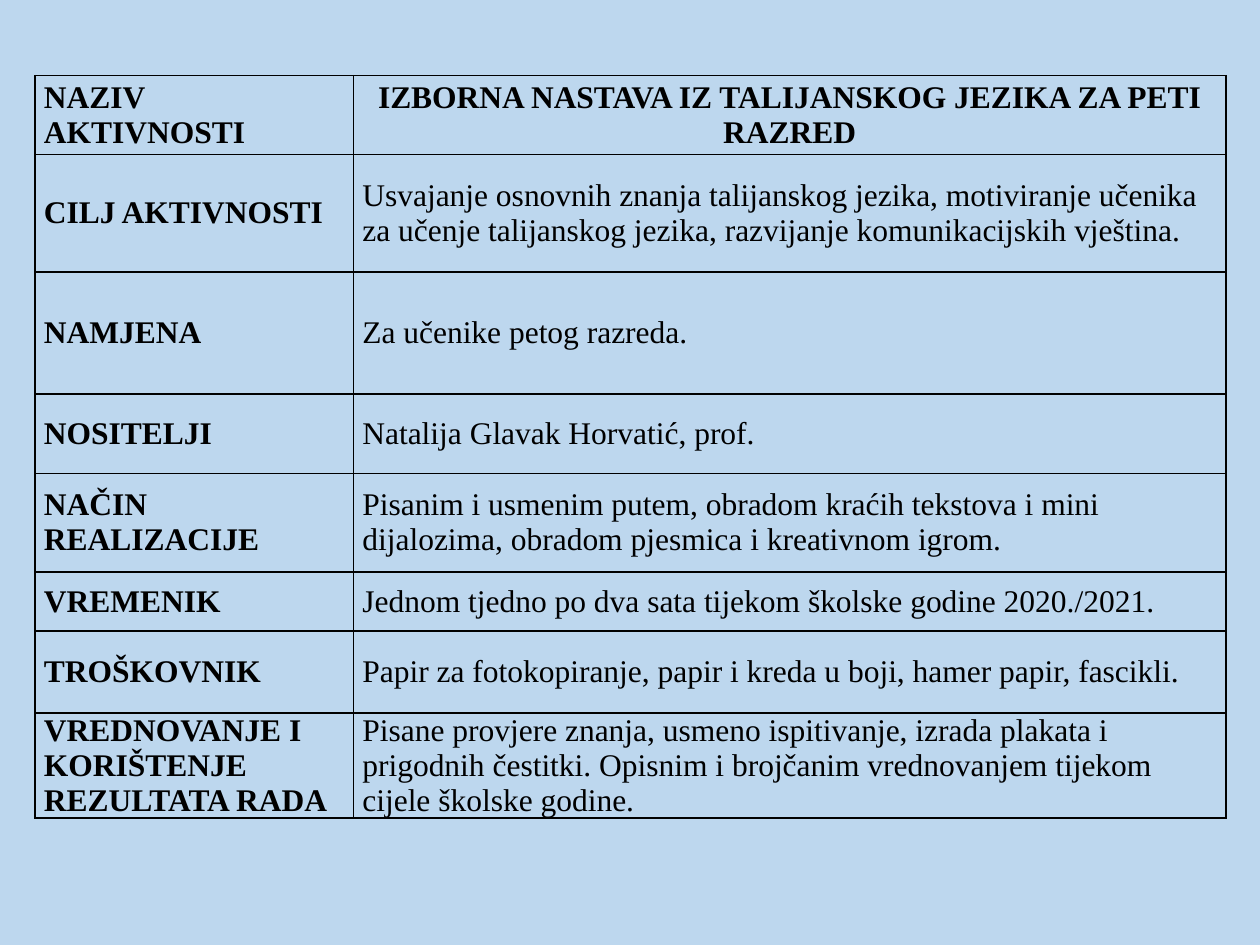
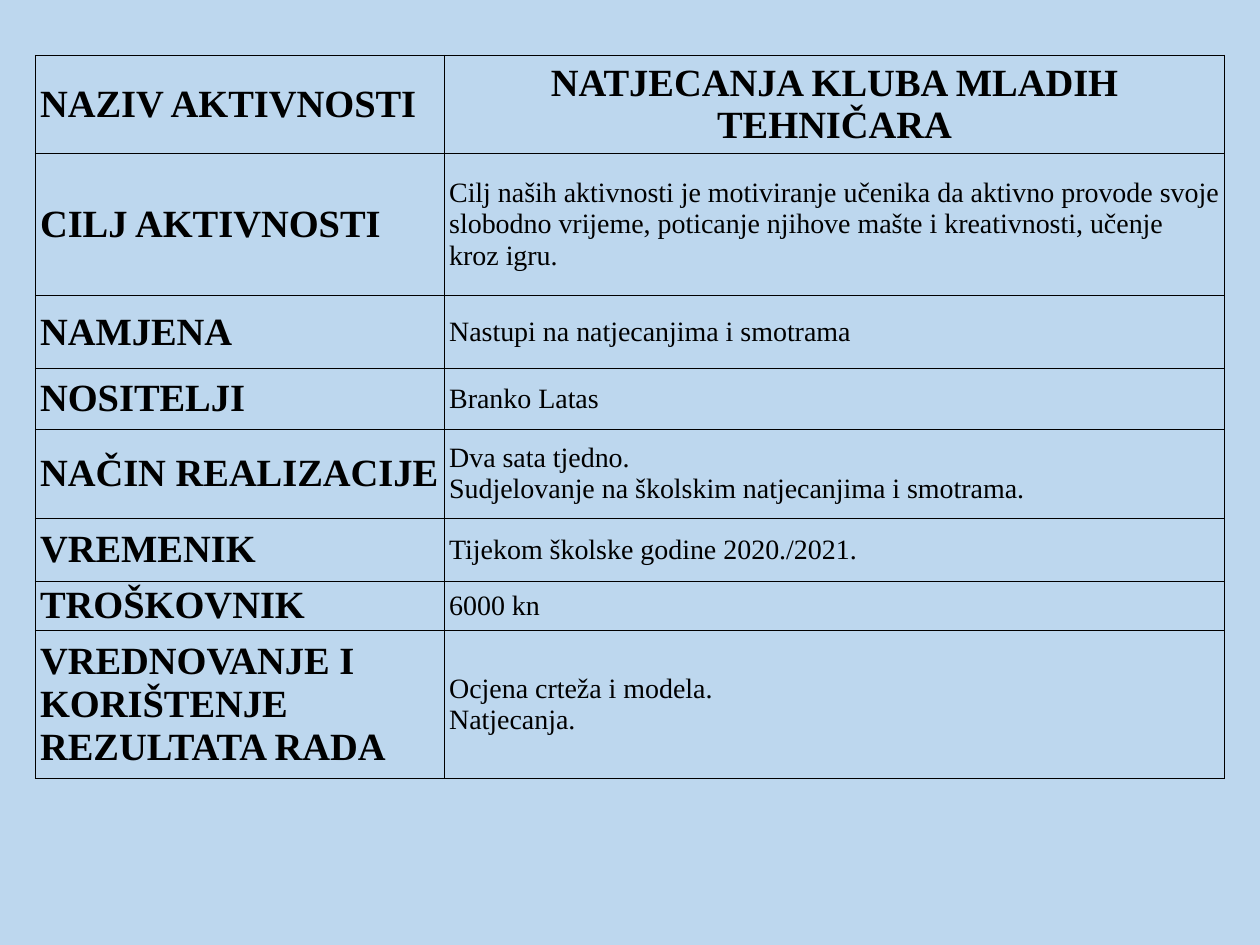
from lxml.etree import SubElement
from pptx import Presentation
from pptx.dml.color import RGBColor
from pptx.enum.text import MSO_ANCHOR, PP_ALIGN
from pptx.oxml.ns import qn
from pptx.util import Pt

BACKGROUND = "BDD7EE"
INK = "000000"
FONT = "Times New Roman"
LABELS = [
    "NAZIV AKTIVNOSTI",
    "CILJ AKTIVNOSTI",
    "NAMJENA",
    "NOSITELJI",
    "NAČIN REALIZACIJE",
    "VREMENIK",
    "TROŠKOVNIK",
    "VREDNOVANJE I KORIŠTENJE REZULTATA RADA",
]

ACTIVITIES = [
    {
        "left": 20, "top": 43.2,
        "columns": [182, 498.5],
        "rows": [45.2, 67, 69.8, 45.4, 56.2, 33.8, 47, 59.8],
        "label_size": 18, "detail_size": 18, "inset": 5.1, "border": 1,
        "details": [
            ["IZBORNA NASTAVA IZ TALIJANSKOG JEZIKA ZA PETI RAZRED"],
            ["Usvajanje osnovnih znanja talijanskog jezika, motiviranje učenika "
             "za učenje talijanskog jezika, razvijanje komunikacijskih vještina."],
            ["Za učenike petog razreda."],
            ["Natalija Glavak Horvatić, prof."],
            ["Pisanim i usmenim putem, obradom kraćih tekstova i mini dijalozima, "
             "obradom pjesmica i kreativnom igrom."],
            ["Jednom tjedno po dva sata tijekom školske godine 2020./2021."],
            ["Papir za fotokopiranje, papir i kreda u boji, hamer papir, fascikli."],
            ["Pisane provjere znanja, usmeno ispitivanje, izrada plakata i prigodnih "
             "čestitki. Opisnim i brojčanim vrednovanjem tijekom cijele školske godine."],
        ],
    },
    {
        "left": 20.2, "top": 31.7,
        "columns": [233.8, 445.8],
        "rows": [56, 81.2, 41.8, 34.6, 51, 36, 28.2, 84.4],
        "label_size": 22, "detail_size": 16, "inset": 2.7, "border": 0.75,
        "details": [
            ["NATJECANJA KLUBA MLADIH TEHNIČARA"],
            ["Cilj naših aktivnosti je motiviranje učenika da aktivno provode svoje "
             "slobodno vrijeme, poticanje njihove mašte i kreativnosti, učenje kroz igru."],
            ["Nastupi na natjecanjima i smotrama"],
            ["Branko Latas"],
            ["Dva sata tjedno.", "Sudjelovanje na školskim natjecanjima i smotrama."],
            ["Tijekom školske godine 2020./2021."],
            ["6000 kn"],
            ["Ocjena crteža i modela.", "Natjecanja."],
        ],
    },
]


def color(value):
    return RGBColor.from_string(value)


def draw_borders(cell, width):
    properties = cell._tc.get_or_add_tcPr()
    for position, side in enumerate(("lnL", "lnR", "lnT", "lnB")):
        line = SubElement(properties, qn(f"a:{side}"), w=str(Pt(width)))
        ink = SubElement(SubElement(line, qn("a:solidFill")), qn("a:srgbClr"))
        ink.set("val", INK)
        properties.insert(position, line)


def fill_cell(cell, lines, size, bold, align, activity):
    cell.fill.background()
    draw_borders(cell, activity["border"])
    cell.vertical_anchor = MSO_ANCHOR.MIDDLE
    cell.margin_left = cell.margin_right = Pt(activity["inset"])
    cell.margin_top = cell.margin_bottom = 0
    for index, line in enumerate(lines):
        frame = cell.text_frame
        paragraph = frame.add_paragraph() if index else frame.paragraphs[0]
        paragraph.alignment = align
        run = paragraph.add_run()
        run.text = line
        run.font.name = FONT
        run.font.size = Pt(size)
        run.font.bold = bold
        run.font.color.rgb = color(INK)


def add_activity(presentation, activity):
    slide = presentation.slides.add_slide(presentation.slide_layouts[6])
    slide.background.fill.solid()
    slide.background.fill.fore_color.rgb = color(BACKGROUND)
    columns, rows = activity["columns"], activity["rows"]
    table = slide.shapes.add_table(
        len(rows), len(columns), Pt(activity["left"]), Pt(activity["top"]),
        Pt(sum(columns)), Pt(sum(rows))).table
    table.first_row = table.horz_banding = False
    for column, width in zip(table.columns, columns):
        column.width = Pt(width)
    for index, (label, detail) in enumerate(zip(LABELS, activity["details"])):
        table.rows[index].height = Pt(rows[index])
        heading = index == 0
        fill_cell(table.cell(index, 0), [label], activity["label_size"],
                  True, PP_ALIGN.LEFT, activity)
        fill_cell(table.cell(index, 1), detail,
                  activity["label_size" if heading else "detail_size"], heading,
                  PP_ALIGN.CENTER if heading else PP_ALIGN.LEFT, activity)


def main():
    presentation = Presentation()
    presentation.slide_width, presentation.slide_height = Pt(720), Pt(540)
    for activity in ACTIVITIES:
        add_activity(presentation, activity)
    presentation.save("out.pptx")


if __name__ == "__main__":
    main()
